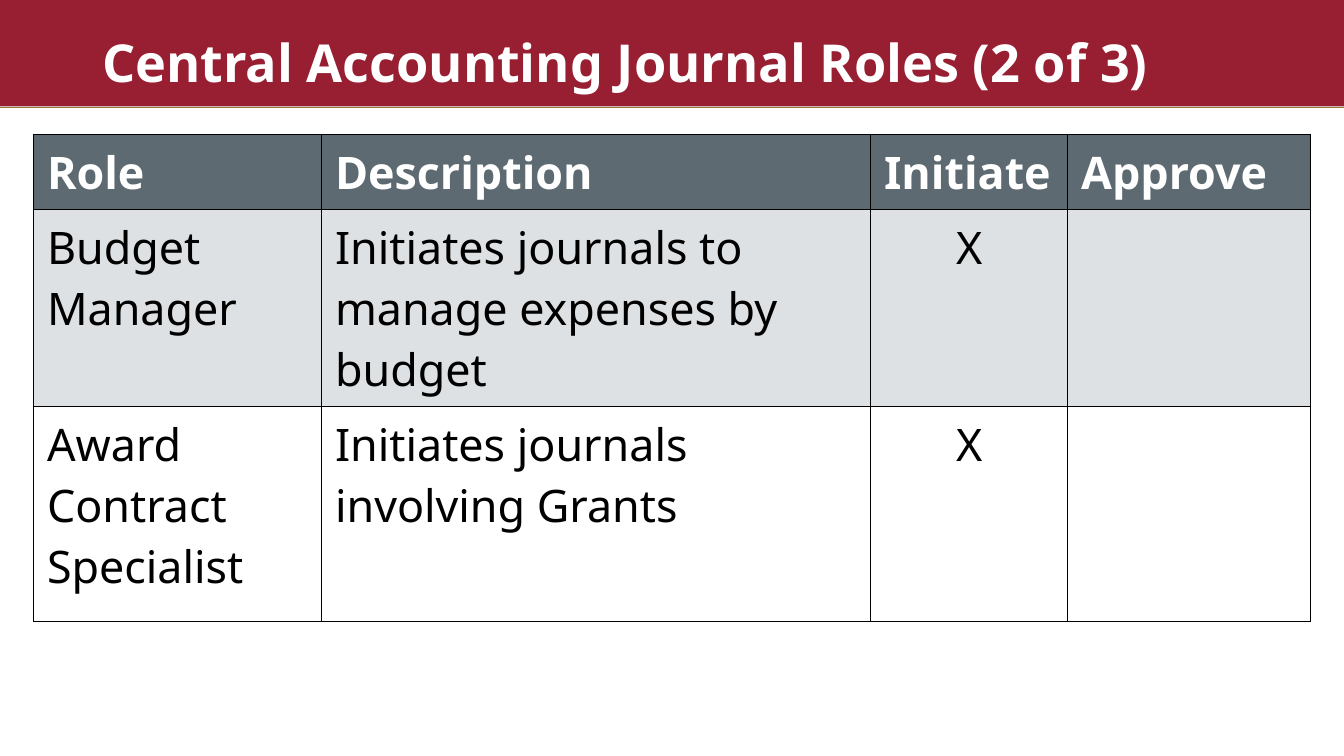
import pptx
import pptx.dml.color
import pptx.enum.shapes
import pptx.enum.text
import pptx.oxml
import pptx.oxml.ns
import pptx.util

Pt = pptx.util.Pt
ALIGN = pptx.enum.text.PP_ALIGN
FONT = "Noto Sans"
WHITE, BLACK = "FFFFFF", "000000"

TITLE = "Central Accounting Journal Roles (2 of 3)"
ROWS = [
    ("Role", "Description", "Initiate", "Approve"),
    ("Budget Manager", "Initiates journals to manage expenses by budget", "X", ""),
    ("Award Contract Specialist", "Initiates journals involving Grants", "X", ""),
]
COL_WIDTHS = [154.3, 294.1, 105.6, 130]
ROW_HEIGHTS = [40.2, 105.6, 115.2]
ROW_FILLS = ["5E6A71", "DEE1E3", WHITE]
SLIDE_W, SLIDE_H = 720, 405
BANNER_H, RULE_Y = 57, 57.6


def rgb(value):
    return pptx.dml.color.RGBColor.from_string(value)


def style(p, size, color, bold):
    p.font.name = FONT
    p.font.size = Pt(size)
    for r in p.runs:
        r.font.name = FONT
        r.font.size = Pt(size)
        r.font.bold = bold
        r.font.color.rgb = rgb(color)


def add_borders(cell):
    """Draw a 1 pt black line on all four sides, placed ahead of the cell's fill."""
    tcPr = cell._tc.get_or_add_tcPr()
    for i, side in enumerate(("lnL", "lnR", "lnT", "lnB")):
        tcPr.insert(i, pptx.oxml.parse_xml(
            f'<a:{side} {pptx.oxml.ns.nsdecls("a")} w="{Pt(1)}"><a:solidFill>'
            f'<a:srgbClr val="{BLACK}"/></a:solidFill></a:{side}>'))


def add_banner(slide):
    sp = slide.shapes.add_shape(
        pptx.enum.shapes.MSO_SHAPE.RECTANGLE, 0, 0, Pt(SLIDE_W), Pt(BANNER_H))
    sp.shadow.inherit = False
    sp.fill.solid()
    sp.fill.fore_color.rgb = rgb("981E32")
    sp.line.fill.background()

    rule = slide.shapes.add_connector(
        pptx.enum.shapes.MSO_CONNECTOR.STRAIGHT,
        0, Pt(RULE_Y), Pt(SLIDE_W), Pt(RULE_Y))
    rule.line.color.rgb = rgb("8F7E35")
    rule.line.width = Pt(1)
    rule._element.spPr.append(pptx.oxml.parse_xml(
        f'<a:effectLst {pptx.oxml.ns.nsdecls("a")}/>'))


def add_title(slide):
    tf = slide.shapes.add_textbox(Pt(18.7), Pt(15.5), Pt(696), Pt(38.2)).text_frame
    tf.word_wrap = True
    tf.vertical_anchor = pptx.enum.text.MSO_ANCHOR.BOTTOM
    tf.margin_left = tf.margin_right = Pt(36)
    tf.text = TITLE
    p = tf.paragraphs[0]
    p.line_spacing = 0.9
    style(p, 28, WHITE, True)


def add_roles_table(slide):
    table = slide.shapes.add_table(
        len(ROWS), len(COL_WIDTHS), Pt(18), Pt(72),
        Pt(sum(COL_WIDTHS)), Pt(sum(ROW_HEIGHTS))).table
    for col, width in zip(table.columns, COL_WIDTHS):
        col.width = Pt(width)
    for i, (texts, height, fill) in enumerate(zip(ROWS, ROW_HEIGHTS, ROW_FILLS)):
        table.rows[i].height = Pt(height)
        header = i == 0
        for j, text in enumerate(texts):
            cell = table.cell(i, j)
            cell.fill.solid()
            cell.fill.fore_color.rgb = rgb(fill)
            add_borders(cell)
            cell.text_frame.text = text
            p = cell.text_frame.paragraphs[0]
            if text == "X":
                p.alignment = ALIGN.CENTER
            style(p, 24, WHITE if header else BLACK, header)


def main():
    prs = pptx.Presentation()
    prs.slide_width, prs.slide_height = Pt(SLIDE_W), Pt(SLIDE_H)
    slide = prs.slides.add_slide(prs.slide_layouts[6])
    add_banner(slide)
    add_title(slide)
    add_roles_table(slide)
    prs.save("out.pptx")


if __name__ == "__main__":
    main()
